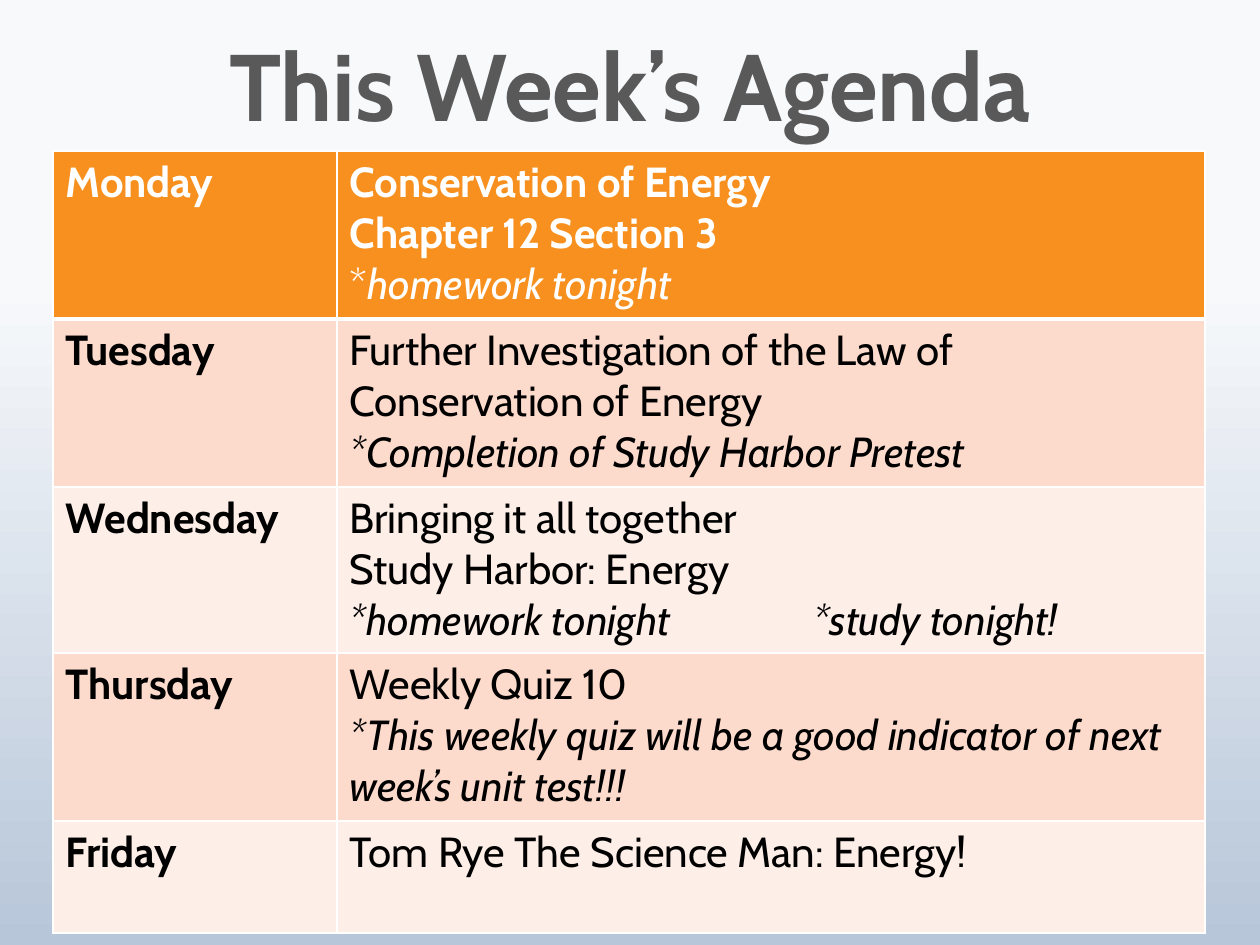
from dataclasses import dataclass

from lxml import etree
from pptx import Presentation
from pptx.dml.color import RGBColor
from pptx.enum.text import MSO_ANCHOR, PP_ALIGN
from pptx.oxml.ns import qn
from pptx.util import Pt

MIDDLE = MSO_ANCHOR.MIDDLE
CENTER = PP_ALIGN.CENTER
EMU_PER_PX = 914400 / 126


@dataclass(frozen=True)
class Theme:
    font: str = "Cabin"
    title_size: int = 54
    title_spacing: int = 56
    body_size: int = 24
    title: str = "595959"
    header_text: str = "FFFFFF"
    text: str = "000000"
    header_fill: str = "F7901E"
    bands: tuple = ("FCDBCD", "FDEEE8")
    border: str = "FFFFFF"
    border_width: int = 1
    header_rule: int = 3
    sky: str = "F7F9FB"
    ground: str = "B7C6D9"


THEME = Theme()
TITLE_BOX = (126, 4, 1008, 174)
AGENDA_BOX = (53, 151, 1152, 782)
DAY_WIDTH = 284
ROW_HEIGHTS = (168, 168, 166, 168, 112)
NOTE_TAB = 464

AGENDA = [
    ("Monday", ["Conservation of Energy", "Chapter 12 Section 3"], "*homework tonight"),
    ("Tuesday", ["Further Investigation of the Law of Conservation of Energy"],
     "*Completion of Study Harbor Pretest"),
    ("Wednesday", ["Bringing it all together", "Study Harbor: Energy"],
     "*homework tonight\t*study tonight!"),
    ("Thursday", ["Weekly Quiz 10"],
     "*This weekly quiz will be a good indicator of next week’s unit test!!!"),
    ("Friday", ["Tom Rye The Science Man: Energy!"], None),
]


def px(length):
    return round(length * EMU_PER_PX)


def color(value):
    return RGBColor.from_string(value)


def style_font(font, size, text_color, bold=False, italic=False):
    font.name = THEME.font
    font.size = Pt(size)
    font.color.rgb = color(text_color)
    font.bold = bold
    font.italic = italic


def paint_background(slide):
    fill = slide.background.fill
    fill.gradient()
    fill.gradient_angle = 270
    stops = ((0.3, THEME.sky), (1, THEME.ground))
    for stop, (position, value) in zip(fill.gradient_stops, stops):
        stop.position = position
        stop.color.rgb = color(value)


def add_title(slide, box, text):
    frame = slide.shapes.add_textbox(*map(px, box)).text_frame
    frame.word_wrap = True
    frame.vertical_anchor = MIDDLE
    paragraph = frame.paragraphs[0]
    paragraph.text = text
    paragraph.alignment = CENTER
    paragraph.line_spacing = Pt(THEME.title_spacing)
    style_font(paragraph.font, THEME.title_size, THEME.title, bold=True)


def add_borders(cell, top, bottom):
    properties = cell._tc.get_or_add_tcPr()
    side = THEME.border_width
    for tag, width in (("lnL", side), ("lnR", side), ("lnT", top), ("lnB", bottom)):
        line = etree.SubElement(properties, qn(f"a:{tag}"), w=str(Pt(width)))
        fill = etree.SubElement(line, qn("a:solidFill"))
        etree.SubElement(fill, qn("a:srgbClr"), val=THEME.border)


def add_tab_stop(paragraph, position):
    tabs = etree.Element(qn("a:tabLst"))
    etree.SubElement(tabs, qn("a:tab"), pos=str(px(position)), algn="l")
    paragraph._p.get_or_add_pPr().insert(0, tabs)


def write_lines(cell, lines, text_color, bold):
    cell.text = "\n".join(lines)
    for paragraph in cell.text_frame.paragraphs:
        style_font(paragraph.font, THEME.body_size, text_color, bold)


def write_note(cell, note, text_color, upright_star):
    paragraph = cell.text_frame.add_paragraph()
    style_font(paragraph.font, THEME.body_size, text_color, italic=not upright_star)
    if "\t" in note:
        add_tab_stop(paragraph, NOTE_TAB)
    for text in (note[0], note[1:]) if upright_star else (note,):
        run = paragraph.add_run()
        run.text = text
        run.font.italic = text != "*"


def add_agenda(slide, box, agenda):
    table = slide.shapes.add_table(len(agenda), 2, *map(px, box)).table
    table.first_row = False
    table.horz_banding = False
    for column, width in zip(table.columns, (DAY_WIDTH, box[2] - DAY_WIDTH)):
        column.width = px(width)
    for index, (day, lines, note) in enumerate(agenda):
        table.rows[index].height = px(ROW_HEIGHTS[index])
        header = index == 0
        fill = THEME.header_fill if header else THEME.bands[(index - 1) % 2]
        text_color = THEME.header_text if header else THEME.text
        top = THEME.header_rule if index == 1 else THEME.border_width
        bottom = THEME.header_rule if header else THEME.border_width
        day_cell, plan_cell = table.cell(index, 0), table.cell(index, 1)
        for cell in (day_cell, plan_cell):
            add_borders(cell, top, bottom)
            cell.fill.solid()
            cell.fill.fore_color.rgb = color(fill)
        write_lines(day_cell, [day], text_color, bold=True)
        write_lines(plan_cell, lines, text_color, bold=header)
        if note:
            write_note(plan_cell, note, text_color, upright_star=header)


def main():
    presentation = Presentation()
    presentation.slide_width = px(1260)
    presentation.slide_height = px(945)
    slide = presentation.slides.add_slide(presentation.slide_layouts[6])
    paint_background(slide)
    add_title(slide, TITLE_BOX, "This Week’s Agenda")
    add_agenda(slide, AGENDA_BOX, AGENDA)
    presentation.save("out.pptx")


if __name__ == "__main__":
    main()
